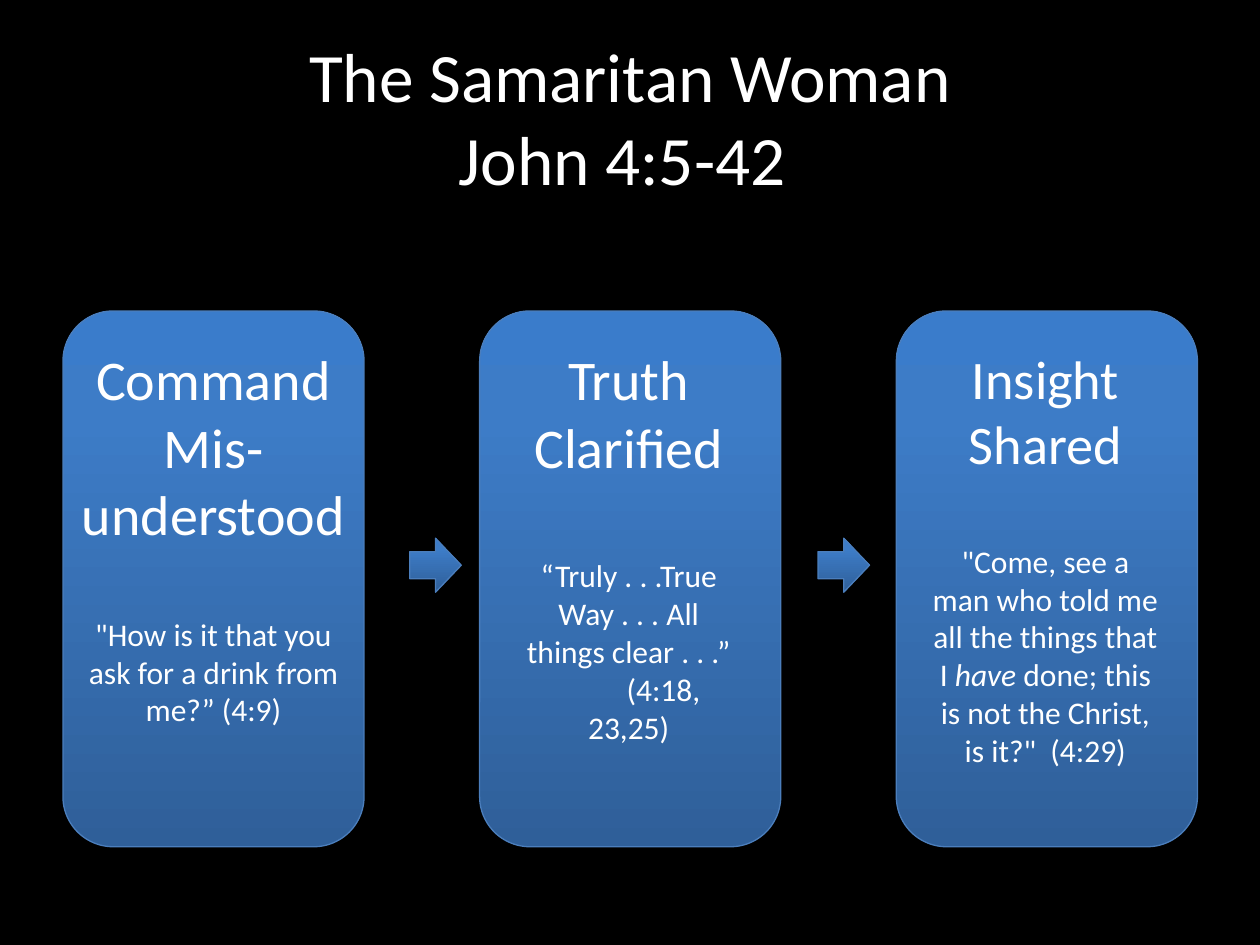
import copy
import pptx
import pptx.util
import pptx.dml.color
import pptx.enum.shapes
import pptx.enum.text
from pptx.util import Cm, Pt

# Content
TITLE = "The Samaritan Woman\vJohn 4:5-42 "
# Each quote line is (left indent in cm, [(text, italic), ...])
STEPS = [
    dict(heading="Command Mis-understood", size=32, gap=39, inset=0, width=6.07, height=8.81,
         quote=[(0, [("\"How is it that you ask for a drink from me?” (4:9)", False)])]),
    dict(heading="Truth Clarified", size=32, gap=44, inset=0.48, width=5.05, height=9.14,
         quote=[(0, [("“Truly . . .True Way . . . All things clear . . .”", False)]),
                (1.4, [("(4:18,", False)]),
                (0, [("23,25)", False)])]),
    dict(heading="Insight Shared", size=31, gap=38, inset=0.48, width=5.05, height=9.63,
         quote=[(0, [("\"Come, see a man who told me all the things that I ", False),
                     ("have ", True),
                     ("done; this is not the Christ, is it?\"  (4:29)", False)])]),
]

# Layout in cm
LEFT, CARD_TOP, CARD_WIDTH, CARD_HEIGHT, CARD_STEP = 1.27, 6.27, 6.07, 10.8, 8.4
ARROW_LEFT, ARROW_TOP, ARROW_WIDTH, ARROW_HEIGHT, ARROW_STEP = 8.26, 10.85, 1.04, 1.09, 8.23
TEXT_TOP = 6.83

FONT, WHITE, BLACK, OUTLINE = "Calibri", "FFFFFF", "000000", "4B7EBC"
GRADIENT = [(0, "2F5F99"), (0.8, "3D7CC7"), (1, "3A7CCB")]
SHAPES = pptx.enum.shapes.MSO_SHAPE
CENTER = pptx.enum.text.PP_ALIGN.CENTER


def color(value):
    return pptx.dml.color.RGBColor.from_string(value)


def style(para, size):
    para.alignment = CENTER
    para.font.name, para.font.size = FONT, Pt(size)
    para.font.color.rgb = color(WHITE)


def add_blue_shape(kind, left, top, width, height):
    shape = page.shapes.add_shape(kind, Cm(left), Cm(top), Cm(width), Cm(height))
    shape.shadow.inherit = False
    shape.line.color.rgb, shape.line.width = color(OUTLINE), Pt(0.75)
    shape.fill.gradient()
    shape.fill.gradient_angle = 90
    stop_list = shape._element.spPr.find(".//" + pptx.oxml.ns.qn("a:gsLst"))
    stop_list.append(copy.deepcopy(stop_list[-1]))
    for stop, (position, value) in zip(shape.fill.gradient_stops, GRADIENT):
        stop.position = position
        stop.color.rgb = color(value)


def add_step_text(step, left):
    box = page.shapes.add_textbox(Cm(left + step["inset"]), Cm(TEXT_TOP),
                                  Cm(step["width"]), Cm(step["height"]))
    frame = box.text_frame
    frame.word_wrap = True
    frame.auto_size = pptx.enum.text.MSO_AUTO_SIZE.SHAPE_TO_FIT_TEXT
    heading = frame.paragraphs[0]
    heading.text = step["heading"]
    style(heading, step["size"])
    heading.space_after = Pt(step["gap"])
    for indent, spans in step["quote"]:
        para = frame.add_paragraph()
        style(para, 18)
        if indent:
            para._p.get_or_add_pPr().set("marL", str(Cm(indent)))
        for text, italic in spans:
            span = para.add_run()
            span.text = text
            if italic:
                span.font.italic = True


# Page and title
deck = pptx.Presentation()
deck.slide_width, deck.slide_height = Cm(25.4), Cm(19.05)
page = deck.slides.add_slide(deck.slide_layouts[5])
page.background.fill.solid()
page.background.fill.fore_color.rgb = color(BLACK)
title = page.shapes.title
title.left, title.top, title.width, title.height = Cm(1.27), Cm(0.76), Cm(22.86), Cm(3.18)
title.text_frame.text = TITLE
title.text_frame.vertical_anchor = pptx.enum.text.MSO_ANCHOR.MIDDLE
style(title.text_frame.paragraphs[0], 39.6)

# Cards with their text
for index, step in enumerate(STEPS):
    card_left = LEFT + index * CARD_STEP
    add_blue_shape(SHAPES.ROUNDED_RECTANGLE, card_left, CARD_TOP, CARD_WIDTH, CARD_HEIGHT)
    add_step_text(step, card_left)

# Arrows between cards
for index in range(len(STEPS) - 1):
    add_blue_shape(SHAPES.RIGHT_ARROW, ARROW_LEFT + index * ARROW_STEP, ARROW_TOP,
                   ARROW_WIDTH, ARROW_HEIGHT)

deck.save("out.pptx")
